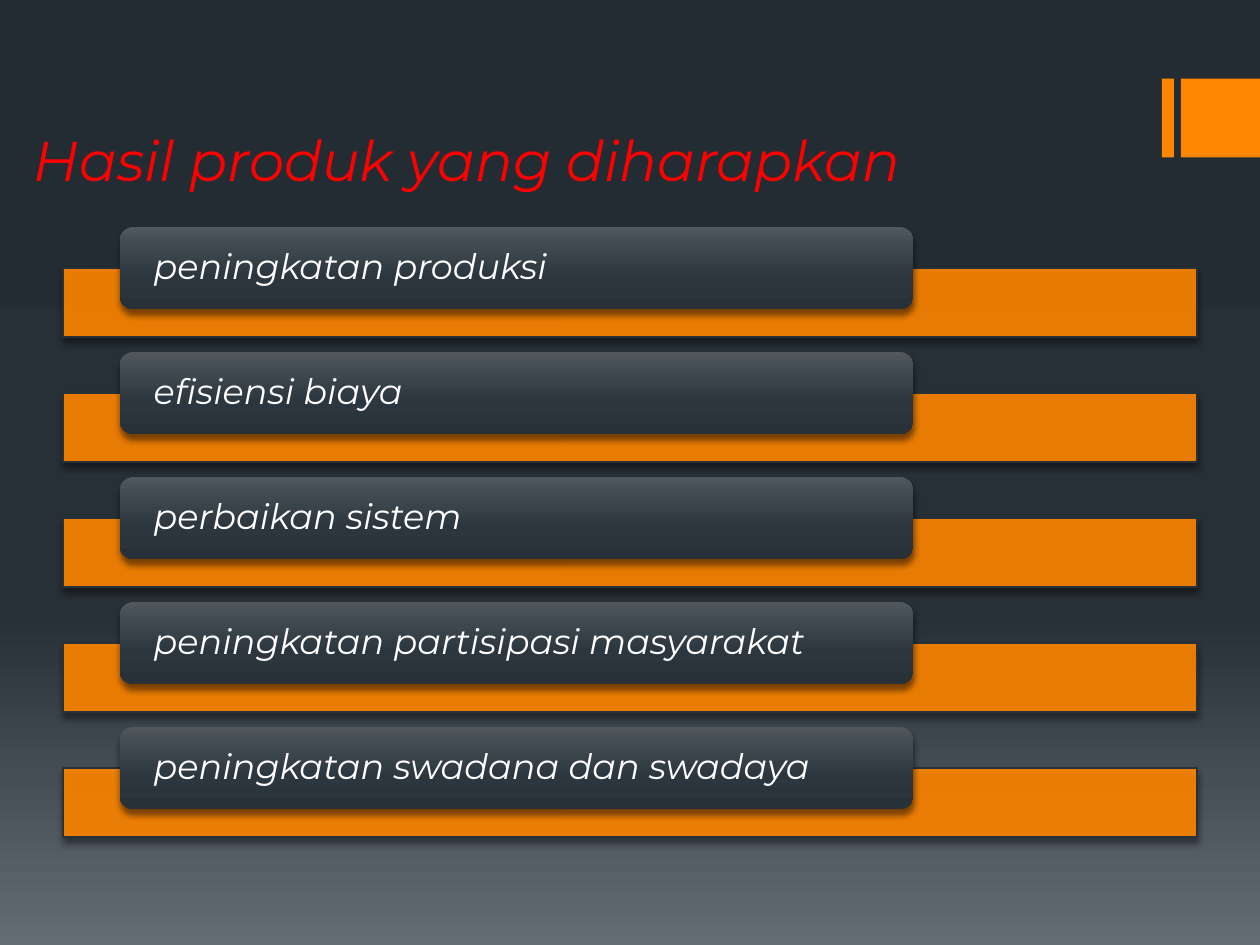
from lxml import etree
from pptx import Presentation
from pptx.dml.color import RGBColor
from pptx.enum.shapes import MSO_SHAPE
from pptx.enum.text import MSO_ANCHOR, MSO_AUTO_SIZE, PP_ALIGN
from pptx.oxml.ns import qn
from pptx.util import Pt

RECTANGLE = MSO_SHAPE.RECTANGLE
ROUNDED = MSO_SHAPE.ROUNDED_RECTANGLE
MIDDLE, BOTTOM = MSO_ANCHOR.MIDDLE, MSO_ANCHOR.BOTTOM
LEFT = PP_ALIGN.LEFT
NO_AUTOFIT = MSO_AUTO_SIZE.NONE

ORANGE = RGBColor(0xFF, 0x86, 0x00)
RED = RGBColor(0xFF, 0x00, 0x00)
WHITE = RGBColor(0xFF, 0xFF, 0xFF)
BLACK = RGBColor(0x00, 0x00, 0x00)
SLATE = RGBColor(0x28, 0x31, 0x38)
SLATE_MID = RGBColor(0x2B, 0x36, 0x3E)
SLATE_LIGHT = RGBColor(0x50, 0x57, 0x5D)
NIGHT = RGBColor(0x24, 0x2C, 0x33)
NIGHT_MID = RGBColor(0x27, 0x30, 0x37)
MIST = RGBColor(0x63, 0x6D, 0x76)

BACKGROUND_STOPS = [(0, NIGHT), (65, NIGHT_MID), (100, MIST)]
LABEL_STOPS = [(0, SLATE_LIGHT), (60, SLATE_MID), (100, SLATE)]
RESULTS = [
    "peningkatan produksi",
    "efisiensi biaya",
    "perbaikan sistem",
    "peningkatan partisipasi masyarakat",
    "peningkatan swadana dan swadaya",
]
FIRST_TOP = 129.7
ROW_PITCH = 71.43


class SlideBuilder:
    """Draws styled elements on the current slide."""

    font_name = "Montserrat"

    def __init__(self, slide):
        self.slide = slide

    def add_color(self, parent, color, alpha=100):
        element = etree.SubElement(parent, qn("a:srgbClr"), val=str(color))
        if alpha < 100:
            etree.SubElement(element, qn("a:alpha"), val=str(alpha * 1000))

    def set_gradient(self, fill, element, stops):
        fill.gradient()
        fill.gradient_angle = 270
        stop_list = element.find(".//" + qn("a:gsLst"))
        for stop in list(stop_list):
            stop_list.remove(stop)
        for position, color in stops:
            stop = etree.SubElement(stop_list, qn("a:gs"), pos=str(position * 1000))
            self.add_color(stop, color)

    def set_background(self, stops):
        self.set_gradient(self.slide.background.fill, self.slide.element, stops)

    def set_text(self, shape, text, size, color, anchor):
        frame = shape.text_frame
        frame.text = text
        frame.word_wrap = True
        frame.auto_size = NO_AUTOFIT
        frame.vertical_anchor = anchor
        paragraph = frame.paragraphs[0]
        paragraph.alignment = LEFT
        font = paragraph.runs[0].font
        font.name = self.font_name
        font.size = Pt(size)
        font.italic = True
        font.color.rgb = color

    def add_title(self, text, left, top, width, height):
        title = self.slide.shapes.title
        title.left, title.top = Pt(left), Pt(top)
        title.width, title.height = Pt(width), Pt(height)
        self.set_text(title, text, 32, RED, BOTTOM)

    def add_block(self, kind, left, top, width, height):
        shape = self.slide.shapes.add_shape(
            kind, Pt(left), Pt(top), Pt(width), Pt(height)
        )
        shape.shadow.inherit = False
        shape.fill.solid()
        shape.fill.fore_color.rgb = ORANGE
        shape.line.fill.background()
        return shape

    def add_shadow(self, shape):
        effects = shape.element.spPr.find(qn("a:effectLst"))
        shadow = etree.SubElement(
            effects,
            qn("a:outerShdw"),
            blurRad=str(Pt(3.8)),
            dist=str(Pt(3)),
            dir="5400000",
            rotWithShape="0",
        )
        self.add_color(shadow, BLACK, 48)

    def add_bar(self, left, top, width, height):
        bar = self.add_block(RECTANGLE, left, top, width, height)
        color = bar.element.spPr.find(qn("a:solidFill"))[0]
        etree.SubElement(color, qn("a:alpha"), val="90000")
        bar.line.color.rgb = SLATE
        bar.line.width = Pt(1)
        self.add_shadow(bar)

    def add_label(self, text, left, top, width, height):
        label = self.add_block(ROUNDED, left, top, width, height)
        self.set_gradient(label.fill, label.element, LABEL_STOPS)
        self.add_shadow(label)
        self.set_text(label, text, 20, WHITE, MIDDLE)
        frame = label.text_frame
        frame.margin_left = frame.margin_right = Pt(17.2)
        frame.margin_top = frame.margin_bottom = 0
        frame.paragraphs[0].line_spacing = 0.9


def main():
    presentation = Presentation()
    presentation.slide_width, presentation.slide_height = Pt(720), Pt(540)
    slide = presentation.slides.add_slide(presentation.slide_layouts[5])
    builder = SlideBuilder(slide)
    builder.set_background(BACKGROUND_STOPS)
    builder.add_block(RECTANGLE, 664, 45, 6.8, 45)
    builder.add_block(RECTANGLE, 674.8, 45, 45.2, 45)
    builder.add_title("Hasil produk yang diharapkan", 12, 24, 648, 90)
    for index, result in enumerate(RESULTS):
        top = FIRST_TOP + index * ROW_PITCH
        builder.add_bar(36, top + 23.6, 648, 39.3)
        builder.add_label(result, 68.4, top, 453.6, 47)
    presentation.save("out.pptx")


if __name__ == "__main__":
    main()
